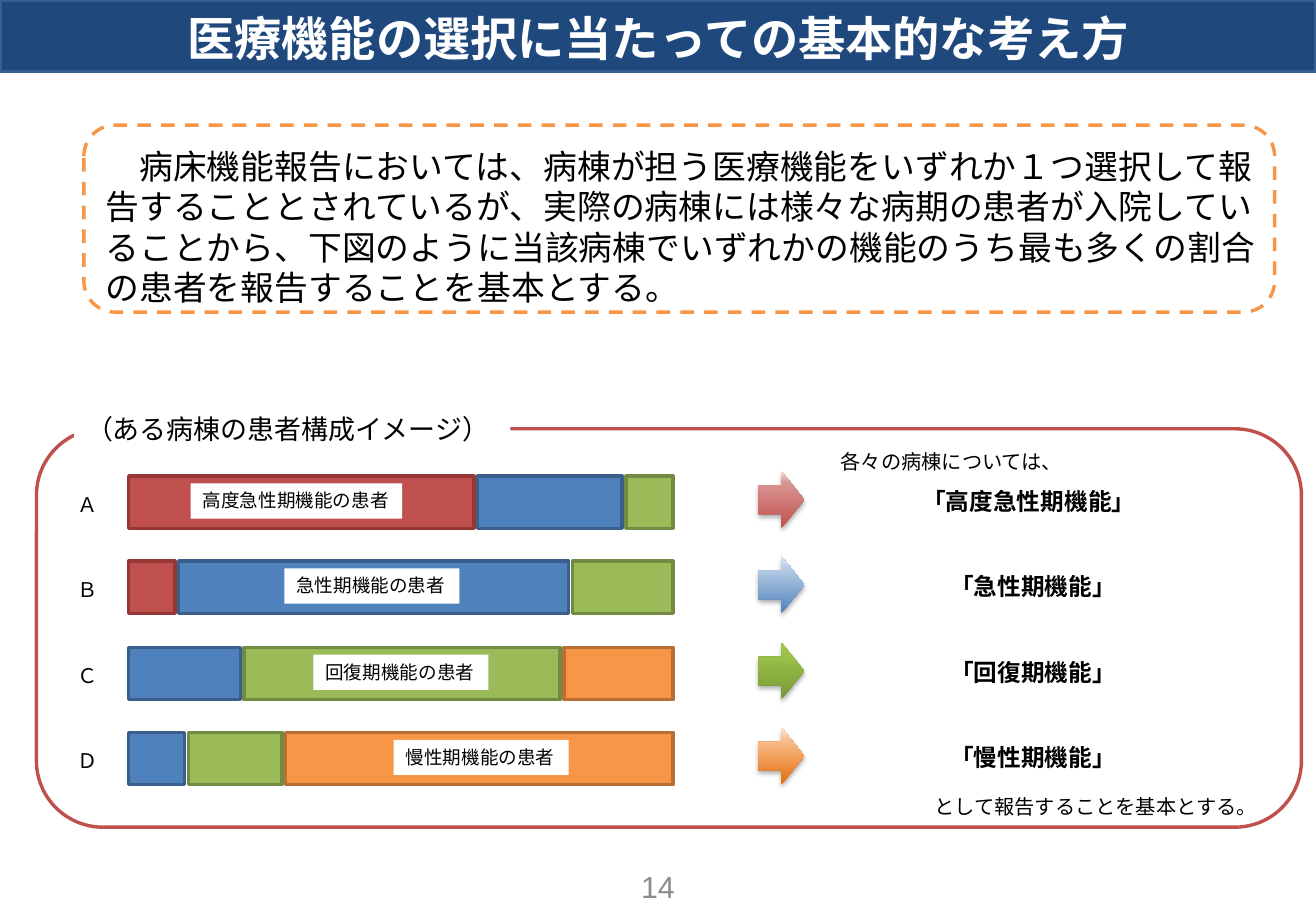
from lxml.etree import SubElement
from pptx import Presentation
from pptx.dml.color import RGBColor
from pptx.enum.dml import MSO_LINE
from pptx.enum.shapes import MSO_SHAPE
from pptx.enum.text import MSO_ANCHOR, MSO_AUTO_SIZE, PP_ALIGN
from pptx.oxml import parse_xml
from pptx.oxml.ns import nsdecls, qn
from pptx.util import Pt

PX = 9144  # 100 px to the inch
LATIN, JAPANESE = "Arial", "Noto Sans CJK JP"

# function: (fill, line, gradient from bottom to top)
ACUTE_HIGH = ("C0504D", "953735", ("C0504D", "D99694", "F2DCDB"))
ACUTE = ("4F81BD", "3A5F8C", ("4F81BD", "B9CDE5", "DCE6F2"))
RECOVERY = ("9BBB59", "738A42", ("779737", "9BC348", "9DC746"))
CHRONIC = ("F79646", "B76F34", ("E46C0A", "FAC090", "FDEADA"))

# ward, name, main function, bar segments, tag (left, width), result (left, width, inset)
WARDS = [
    ("Ａ", "高度急性期機能", ACUTE_HIGH,
     [(ACUTE_HIGH, 284), (ACUTE, 119), (RECOVERY, 39)], (157, 174), (759, 182, 0)),
    ("Ｂ", "急性期機能", ACUTE,
     [(ACUTE_HIGH, 38), (ACUTE, 321), (RECOVERY, 83)], (234, 144), (778, 145, 4)),
    ("Ｃ", "回復期機能", RECOVERY,
     [(ACUTE, 92), (RECOVERY, 260), (CHRONIC, 90)], (258, 144), (778, 145, 4)),
    ("Ｄ", "慢性期機能", CHRONIC,
     [(ACUTE, 46), (RECOVERY, 77), (CHRONIC, 319)], (324, 144), (778, 145, 4)),
]


def color(hex_string):
    return RGBColor.from_string(hex_string)


def px(*lengths):
    return [round(length * PX) for length in lengths]


def style_line(shape, line_color, width=2):
    shape.line.color.rgb = color(line_color)
    shape.line.width = Pt(width)


def add_box(slide, box, kind=MSO_SHAPE.RECTANGLE, fill=None, line=None):
    shape = slide.shapes.add_shape(kind, *px(*box))
    shape.shadow.inherit = False
    if fill:
        shape.fill.solid()
        shape.fill.fore_color.rgb = color(fill)
    else:
        shape.fill.background()
    if line:
        style_line(shape, line)
    else:
        shape.line.fill.background()
    return shape


def write(shape, text, size, bold=False, font_color="000000", font=LATIN,
          align=PP_ALIGN.LEFT, anchor=MSO_ANCHOR.TOP, wrap=True, inset=10):
    frame = shape.text_frame
    frame.text = text
    frame.word_wrap = wrap
    frame.auto_size = MSO_AUTO_SIZE.NONE
    frame.vertical_anchor = anchor
    frame.margin_left = frame.margin_right = inset * PX
    frame.margin_top = frame.margin_bottom = 5 * PX
    paragraph = frame.paragraphs[0]
    paragraph.alignment = align
    for run in paragraph.runs:
        run.font.name = font
        run.font.size = Pt(size)
        run.font.bold = bold
        run.font.color.rgb = color(font_color)
        SubElement(run.font._element, qn("a:ea"), typeface=JAPANESE)


def add_text(slide, box, text, size, fill=None, **options):
    if fill:
        shape = add_box(slide, box, fill=fill)
    else:
        shape = slide.shapes.add_textbox(*px(*box))
    write(shape, text, size, **options)


def add_arrow(slide, box, gradient):
    """Add a right arrow with a vertical gradient and a soft shadow."""
    arrow = add_box(slide, box, MSO_SHAPE.RIGHT_ARROW)
    stops = "".join(f'<a:gs pos="{position}"><a:srgbClr val="{stop}"/></a:gs>'
                    for position, stop in zip((0, 80000, 100000), gradient))
    properties = arrow._element.spPr
    properties.replace(properties.find(qn("a:noFill")), parse_xml(
        f'<a:gradFill {nsdecls("a")}><a:gsLst>{stops}</a:gsLst>'
        '<a:lin ang="16200000" scaled="0"/></a:gradFill>'))
    properties.find(qn("a:effectLst")).append(parse_xml(
        f'<a:outerShdw {nsdecls("a")} blurRad="{Pt(3.1)}" dist="{Pt(1.8)}" dir="5400000" '
        'rotWithShape="0"><a:srgbClr val="000000"><a:alpha val="35000"/></a:srgbClr>'
        '</a:outerShdw>'))


def add_title(slide, box):
    title = slide.shapes.title
    title.left, title.top, title.width, title.height = px(*box)
    title.fill.solid()
    title.fill.fore_color.rgb = color("1F497D")
    style_line(title, "376092")
    write(title, "医療機能の選択に当たっての基本的な考え方", 28, bold=True, font_color="FFFFFF",
          font=JAPANESE, align=PP_ALIGN.CENTER, anchor=MSO_ANCHOR.BOTTOM)


def add_policy(slide, box):
    left, top, width, height = box
    add_text(slide, (left + 8, top + 12, width - 8, height - 9),
             "　病床機能報告においては、病棟が担う医療機能をいずれか１つ選択して報告することと"
             "されているが、実際の病棟には様々な病期の患者が入院していることから、下図のように"
             "当該病棟でいずれかの機能のうち最も多くの割合の患者を報告することを基本とする。", 20)
    frame = add_box(slide, box, MSO_SHAPE.ROUNDED_RECTANGLE, line="F79646")
    frame.line.dash_style = MSO_LINE.DASH


def add_ward(slide, left, top, ward):
    """Add one row: letter, patient mix bar, arrow and reported function."""
    letter, name, main, segments, tag, result = ward
    add_text(slide, (left, top + 8, 37, 30), letter, 12, fill="FFFFFF")
    segment_left = left + 52
    for (fill, line, _), width in segments:
        add_box(slide, (segment_left, top, width, 43), fill=fill, line=line)
        segment_left += width + 3
    tag_left, tag_width = tag
    add_text(slide, (tag_left, top + 6, tag_width, 29), f"{name}の患者", 11,
             fill="FFFFFF", wrap=False)
    add_arrow(slide, (left + 570, top - 4, 38, 47), main[2])
    result_left, result_width, inset = result
    add_text(slide, (result_left, top + 4, result_width, 34), f"「{name}」", 14,
             bold=True, inset=inset)


def add_ward_panel(slide, box):
    left, top, width, height = box
    add_box(slide, box, MSO_SHAPE.ROUNDED_RECTANGLE, line="C0504D")
    add_text(slide, (left + 31, top - 18, 359, 37), "（ある病棟の患者構成イメージ）", 16,
             fill="FFFFFF")
    add_text(slide, (left + 652, top + 12, 206, 30), "各々の病棟については、", 12, fill="FFFFFF")
    for index, ward in enumerate(WARDS):
        add_ward(slide, left + 24, top + 39 + round(index * 70.4), ward)
    add_text(slide, (left + 729, top + height - 32, 311, 30),
             "として報告することを基本とする。", 12)


def main():
    presentation = Presentation()
    presentation.slide_width, presentation.slide_height = px(1083, 750)
    slide = presentation.slides.add_slide(presentation.slide_layouts[5])
    add_title(slide, (0, 0, 1083, 59))
    add_policy(slide, (69, 103, 980, 154))
    add_ward_panel(slide, (30, 353, 1041, 328))
    add_text(slide, (415, 710, 253, 40), "14", 18, font_color="8C8C8C",
             align=PP_ALIGN.CENTER, anchor=MSO_ANCHOR.MIDDLE)
    presentation.save("out.pptx")


if __name__ == "__main__":
    main()
